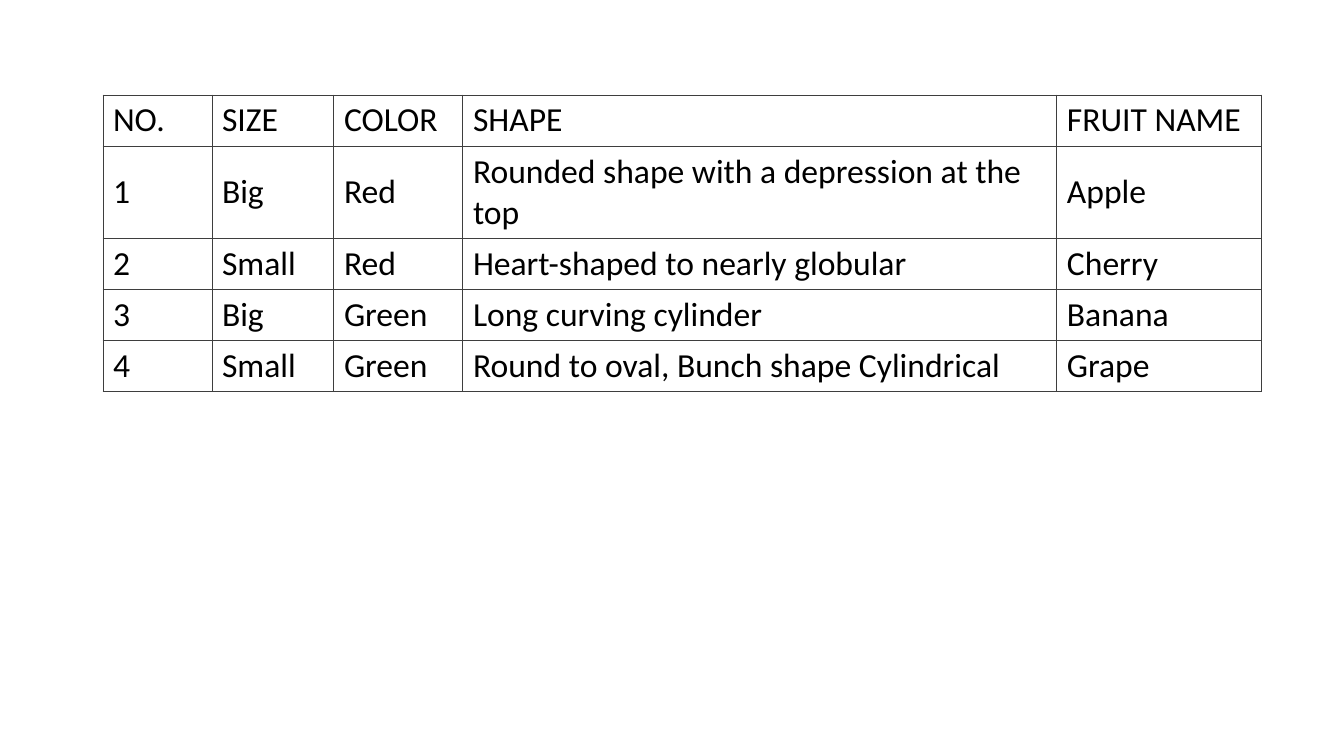
from lxml import etree
from pptx import Presentation
from pptx.dml.color import RGBColor
from pptx.enum.text import MSO_ANCHOR
from pptx.oxml.ns import qn
from pptx.util import Pt

MIDDLE = MSO_ANCHOR.MIDDLE
SCALE = 914400 / 100.8
LEFT, TOP = 103, 95
WIDTHS = [109, 122, 129, 594, 205]
HEIGHTS = [51, 92, 51, 51, 51]
INK, PAPER, RULE = "000000", "FFFFFF", "3E3E3E"

FRUITS = [
    ("NO.", "SIZE", "COLOR", "SHAPE", "FRUIT NAME"),
    ("1", "Big", "Red", "Rounded shape with a depression at the top", "Apple"),
    ("2", "Small", "Red", "Heart-shaped to nearly globular", "Cherry"),
    ("3", "Big", "Green", "Long curving cylinder", "Banana"),
    ("4", "Small", "Green", "Round to oval, Bunch shape Cylindrical", "Grape"),
]


def px(n):
    """Turn pixels into EMU."""
    return round(n * SCALE)


def add_borders(cell):
    props = cell._tc.get_or_add_tcPr()
    for side in ("L", "R", "T", "B"):
        line = etree.SubElement(props, qn(f"a:ln{side}"), w=str(Pt(0.75)))
        fill = etree.SubElement(line, qn("a:solidFill"))
        etree.SubElement(fill, qn("a:srgbClr"), val=RULE)


deck = Presentation()
deck.slide_width, deck.slide_height = px(1344), px(756)
slide = deck.slides.add_slide(deck.slide_layouts[6])

frame = slide.shapes.add_table(
    len(HEIGHTS), len(WIDTHS), px(LEFT), px(TOP), px(sum(WIDTHS)), px(sum(HEIGHTS)))
table = frame.table
table.first_row = table.horz_banding = False
for col, width in zip(table.columns, WIDTHS):
    col.width = px(width)
for row, height, words in zip(table.rows, HEIGHTS, FRUITS):
    row.height = px(height)
    for cell, word in zip(row.cells, words):
        add_borders(cell)
        cell.fill.solid()
        cell.fill.fore_color.rgb = RGBColor.from_string(PAPER)
        cell.vertical_anchor = MIDDLE
        run = cell.text_frame.paragraphs[0].add_run()
        run.text = word
        run.font.name = "Calibri"
        run.font.size = Pt(24)
        run.font.color.rgb = RGBColor.from_string(INK)

deck.save("out.pptx")
